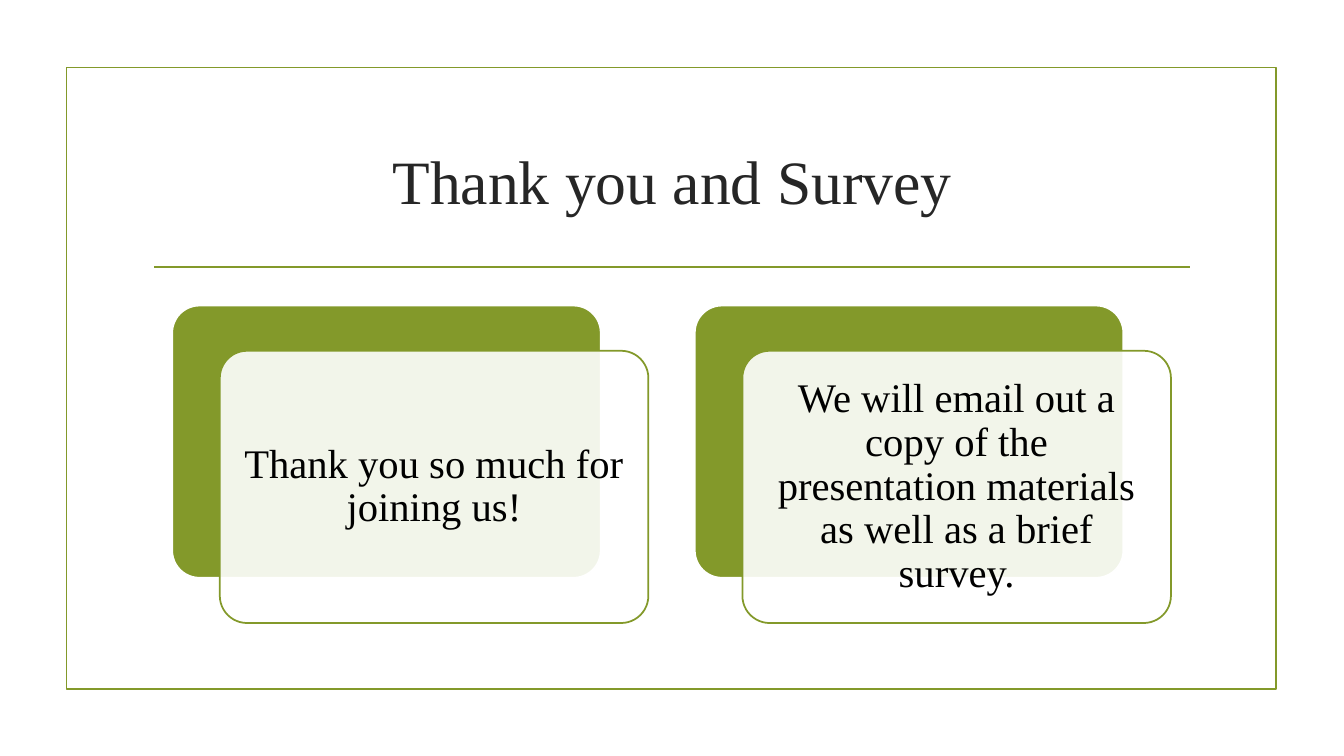
from lxml import etree
from pptx import Presentation
from pptx.dml.color import RGBColor
from pptx.enum.shapes import MSO_CONNECTOR, MSO_SHAPE
from pptx.enum.text import MSO_ANCHOR, PP_ALIGN
from pptx.oxml.ns import qn
from pptx.util import Cm, Pt

RECTANGLE = MSO_SHAPE.RECTANGLE
ROUNDED = MSO_SHAPE.ROUNDED_RECTANGLE
STRAIGHT = MSO_CONNECTOR.STRAIGHT
MIDDLE = MSO_ANCHOR.MIDDLE
CENTER = PP_ALIGN.CENTER

OLIVE = RGBColor(0x83, 0x99, 0x2A)
WHITE = RGBColor(0xFF, 0xFF, 0xFF)
BLACK = RGBColor(0x00, 0x00, 0x00)
CHARCOAL = RGBColor(0x26, 0x26, 0x26)

TITLE_ONLY = 5
CARD_LEFT, CARD_TOP = 4.34, 7.7
CARD_WIDTH, CARD_HEIGHT = 10.8, 6.86
CARD_PITCH = 13.17
FRONT_SHIFT_X, FRONT_SHIFT_Y = 1.2, 1.14

MESSAGES = (
    "Thank you so much for joining us!",
    "We will email out a copy of the presentation materials as well as a brief survey.",
)


class ClosingSlide:
    font_name = "Times New Roman"
    line_width = Pt(1.25)

    def __init__(self, deck):
        self.slide = deck.slides.add_slide(deck.slide_layouts[TITLE_ONLY])

    def set_text(self, shape, text, *, size, color, inset, spacing=1.0):
        frame = shape.text_frame
        frame.word_wrap = True
        frame.vertical_anchor = MIDDLE
        frame.margin_left = frame.margin_right = Cm(inset)
        frame.margin_top = frame.margin_bottom = Cm(inset)
        frame.text = text
        paragraph = frame.paragraphs[0]
        paragraph.alignment = CENTER
        paragraph.line_spacing = spacing
        paragraph.space_before = Pt(0)
        paragraph.font.name = self.font_name
        paragraph.font.size = Pt(size)
        paragraph.font.color.rgb = color

    def title(self, text, left, top, width, height):
        heading = self.slide.shapes.title
        heading.left, heading.top = Cm(left), Cm(top)
        heading.width, heading.height = Cm(width), Cm(height)
        self.set_text(heading, text, size=44, color=CHARCOAL, inset=0.25)

    def box(self, kind, left, top, width, height, *, line, fill=None, opacity=100):
        shape = self.slide.shapes.add_shape(
            kind, Cm(left), Cm(top), Cm(width), Cm(height))
        shape.shadow.inherit = False
        shape.line.color.rgb = line
        shape.line.width = self.line_width
        if fill is None:
            shape.fill.background()
        else:
            shape.fill.solid()
            shape.fill.fore_color.rgb = fill
        if opacity < 100:
            tint = shape._element.spPr.find(f"{qn('a:solidFill')}/{qn('a:srgbClr')}")
            etree.SubElement(tint, qn("a:alpha"), val=str(opacity * 1000))
        if kind == ROUNDED:
            shape.adjustments[0] = 0.1
        return shape

    def rule(self, left, right, y):
        line = self.slide.shapes.add_connector(
            STRAIGHT, Cm(left), Cm(y), Cm(right), Cm(y))
        line.line.color.rgb = OLIVE
        line.line.width = self.line_width
        etree.SubElement(line._element.spPr, qn("a:effectLst"))

    def card(self, text, left, top):
        """Add a solid back panel and a translucent front panel with the text."""
        self.box(ROUNDED, left, top, CARD_WIDTH, CARD_HEIGHT, line=WHITE, fill=OLIVE)
        front = self.box(ROUNDED, left + FRONT_SHIFT_X, top + FRONT_SHIFT_Y,
                         CARD_WIDTH, CARD_HEIGHT, line=OLIVE, fill=WHITE, opacity=90)
        self.set_text(front, text, size=29, color=BLACK, inset=0.3, spacing=0.9)


def main():
    deck = Presentation()
    deck.slide_width, deck.slide_height = Cm(33.87), Cm(19.05)
    closing = ClosingSlide(deck)
    closing.box(RECTANGLE, 1.68, 1.7, 30.48, 15.67, line=OLIVE)
    closing.rule(3.89, 30, 6.73)
    closing.title("Thank you and Survey", 3.61, 2.72, 26.67, 3.63)
    for column, message in enumerate(MESSAGES):
        closing.card(message, CARD_LEFT + column * CARD_PITCH, CARD_TOP)
    deck.save("out.pptx")


if __name__ == "__main__":
    main()
